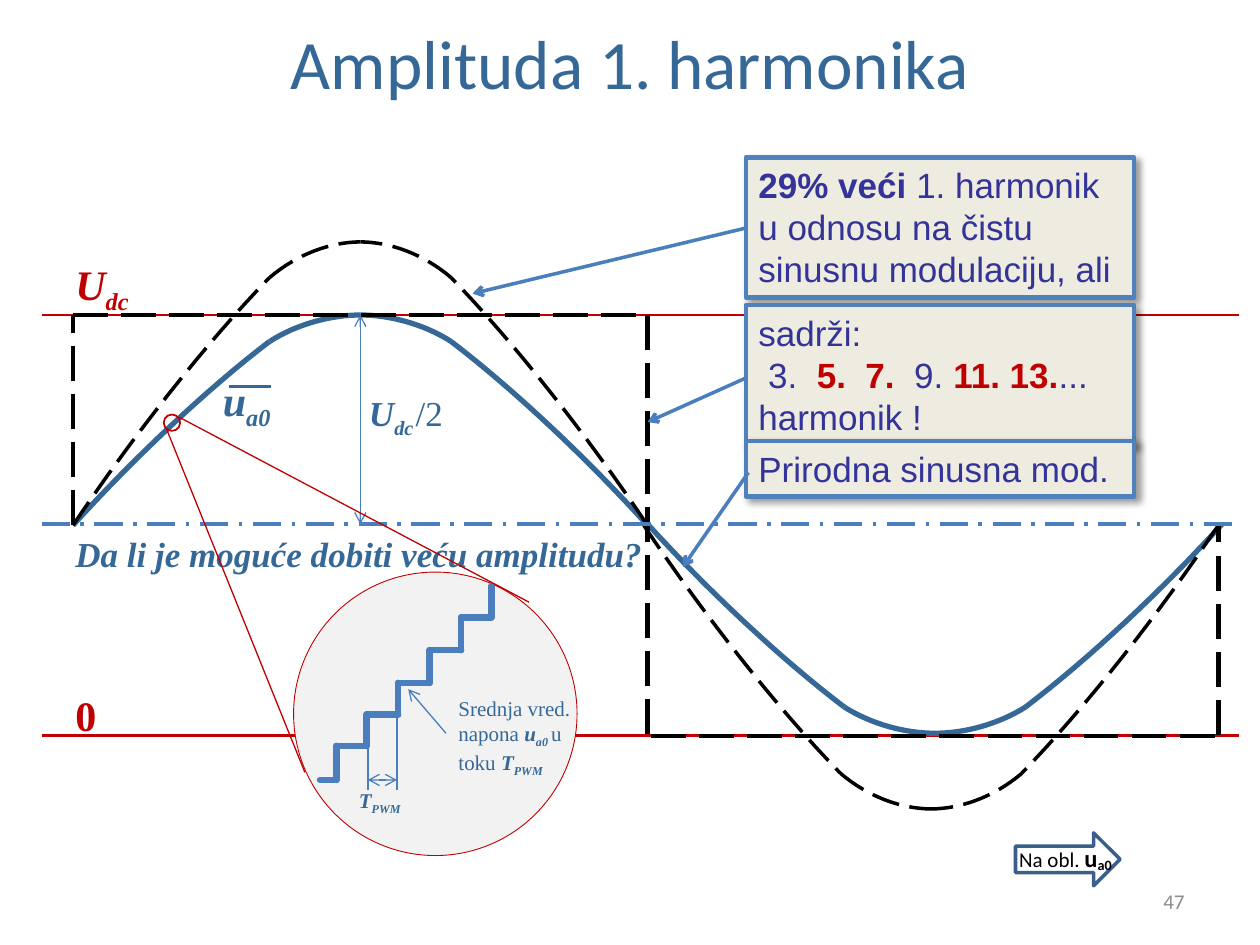
from lxml import etree
from pptx import Presentation
from pptx.dml.color import RGBColor
from pptx.enum.dml import MSO_LINE as Dash
from pptx.enum.shapes import MSO_CONNECTOR as Connector, MSO_SHAPE as Preset
from pptx.enum.text import MSO_ANCHOR as Anchor, MSO_AUTO_SIZE as AutoSize, PP_ALIGN as Align
from pptx.oxml import parse_xml
from pptx.oxml.ns import nsdecls, qn
from pptx.util import Pt

PX = 9144
BLUE = RGBColor(0x35, 0x68, 0x97)
LINE_BLUE = RGBColor(0x4B, 0x7E, 0xBC)
BORDER_BLUE = RGBColor(0x4F, 0x81, 0xBD)
ARROW_BLUE = RGBColor(0x3A, 0x5F, 0x8C)
INDIGO = RGBColor(0x33, 0x33, 0x99)
RED = RGBColor(0xC0, 0x00, 0x00)
BLACK = RGBColor(0, 0, 0)
GREY = RGBColor(0x8C, 0x8C, 0x8C)
LIGHT_GREY = RGBColor(0xF2, 0xF2, 0xF2)
CREAM = RGBColor(0xEE, 0xEC, 0xE1)
SANS, SERIF, NOTE_FONT = "Calibri", "Times New Roman", "Arial"

PLAIN = {"bold": False, "italic": False}
BOLD = {"bold": True}
STRONG = {"bold": True, "italic": True}
SUBSCRIPT = {**STRONG, "baseline": -25}
RED_BOLD = {"bold": True, "color": RED}
RISE = ((0, 0), (47, 52), (105, 107), (156, 146))
CREST = ((156, 146), (178, 160), (205, 167), (228, 167))
QUARTER, PEAK, SAMPLES = 228, 167, 16
SHADOW = (
    f'<a:effectLst {nsdecls("a")}><a:outerShdw blurRad="50800" dist="38100" dir="2700000" '
    'algn="tl" rotWithShape="0"><a:srgbClr val="000000"><a:alpha val="40000"/></a:srgbClr>'
    "</a:outerShdw></a:effectLst>"
)


def bezier(controls, t):
    weights = ((1 - t) ** 3, 3 * t * (1 - t) ** 2, 3 * t * t * (1 - t), t ** 3)
    return tuple(sum(w * point[axis] for w, point in zip(weights, controls)) for axis in (0, 1))


class SlideBuilder:
    def __init__(self, slide):
        self.slide = slide
        self.shapes = slide.shapes

    def stroke(self, line, color, width, dash=None):
        line.color.rgb = color
        line.width = Pt(width)
        if dash:
            line.dash_style = dash

    def line(self, start, end, color, width, dash=None, head=False, tail=False, rounded=False):
        connector = self.shapes.add_connector(
            Connector.STRAIGHT, *(value * PX for value in (*start, *end)))
        self.stroke(connector.line, color, width, dash)
        properties = connector._element.spPr
        outline = properties.find(qn("a:ln"))
        if rounded:
            outline.set("cap", "rnd")
        for wanted, tag in ((head, "a:headEnd"), (tail, "a:tailEnd")):
            if wanted:
                etree.SubElement(outline, qn(tag), type="arrow")
        etree.SubElement(properties, qn("a:effectLst"))

    def half_wave(self, left, baseline, amplitude, color, width, dash=None):
        right = left + 2 * QUARTER
        for origin, direction in ((left, 1), (right, -1)):
            for controls in (RISE, CREST):
                curve = [bezier(controls, step / SAMPLES) for step in range(SAMPLES + 1)]
                points = [((origin + direction * x) * PX, (baseline - y * amplitude / PEAK) * PX)
                          for x, y in curve]
                outline = self.shapes.build_freeform(*points[0], scale=1.0)
                outline.add_line_segments(points[1:], close=False)
                shape = outline.convert_to_shape()
                shape.fill.background()
                shape.shadow.inherit = False
                self.stroke(shape.line, color, width, dash)

    def shape(self, preset, box, color, width, fill=None):
        shape = self.shapes.add_shape(preset, *(value * PX for value in box))
        shape.shadow.inherit = False
        if fill:
            shape.fill.solid()
            shape.fill.fore_color.rgb = fill
        else:
            shape.fill.background()
        self.stroke(shape.line, color, width)
        return shape

    def fill_text(self, frame, paragraphs, align=Align.LEFT, **style):
        for index, runs in enumerate(paragraphs):
            paragraph = frame.add_paragraph() if index else frame.paragraphs[0]
            paragraph.alignment = align
            for text, changes in runs:
                look = {**style, **changes}
                run = paragraph.add_run()
                run.text = text
                run.font.name = look["name"]
                run.font.size = Pt(look["size"])
                run.font.color.rgb = look["color"]
                run.font.bold = look.get("bold", False)
                run.font.italic = look.get("italic", False)
                if "baseline" in look:
                    run._r.get_or_add_rPr().set("baseline", str(look["baseline"] * 1000))

    def text(self, box, runs, wrap=False, grow=True, anchor=Anchor.TOP, **style):
        frame = self.shapes.add_textbox(*(value * PX for value in box)).text_frame
        frame.word_wrap = wrap
        frame.auto_size = AutoSize.SHAPE_TO_FIT_TEXT if grow else AutoSize.NONE
        frame.vertical_anchor = anchor
        self.fill_text(frame, [runs], **style)
        return frame

    def note(self, top, height, paragraphs):
        shape = self.shape(Preset.RECTANGLE, (592, top, 308, height), BORDER_BLUE, 2.75, CREAM)
        properties = shape._element.spPr
        properties.remove(properties.find(qn("a:effectLst")))
        properties.append(parse_xml(SHADOW))
        frame = shape.text_frame
        frame.word_wrap = True
        frame.vertical_anchor = Anchor.TOP
        self.fill_text(frame, paragraphs, name=NOTE_FONT, size=20, color=INDIGO)


def draw_waves(builder):
    for level in (584, 250):
        builder.line((33, level), (983, level), RED, 1.5)
    builder.half_wave(58, 417, 167, BLUE, 3)
    builder.half_wave(514, 416, -166, BLUE, 3)
    square_wave = (((58, 417), (58, 250), (508, 250)), ((514, 250), (514, 583)),
                   ((967, 583), (967, 417)), ((517, 584), (967, 584)))
    for side in square_wave:
        for start, end in zip(side, side[1:]):
            builder.line(start, end, BLACK, 2.5, Dash.LONG_DASH)
    builder.half_wave(58, 417, 225, BLACK, 2, Dash.LONG_DASH)
    builder.half_wave(511, 417, -225, BLACK, 2, Dash.LONG_DASH)


def draw_labels(builder):
    level = {"name": SERIF, "size": 24, "color": RED, "bold": True}
    builder.text((50, 542, 37, 50), [("0", {})], **level)
    builder.text((50, 200, 66, 50), [("U", STRONG), ("dc", SUBSCRIPT)], **level)
    builder.line((33, 416), (983, 416), LINE_BLUE, 0, Dash.LONG_DASH_DOT)
    builder.line((286, 250), (286, 416), LINE_BLUE, 0.75, head=True, tail=True)
    formula = {"name": SERIF, "size": 20, "color": BLUE}
    builder.text((283, 306, 85, 44), [("U", STRONG), ("dc", SUBSCRIPT),
                 (" ", {**SUBSCRIPT, "size": 8}), ("/2", PLAIN)], **formula)
    builder.text((50, 418, 473, 44), [("Da li je moguće dobiti veću amplitudu?", STRONG)], **formula)


def draw_notes(builder):
    builder.note(125, 111, [[("29% veći ", BOLD),
                 ("1. harmonik u odnosu na čistu sinusnu modulaciju, ali", {})]])
    builder.line((592, 181), (375, 233), LINE_BLUE, 2, tail=True)
    builder.note(242, 111, [[("sadrži:", {})],
                 [(" 3.  ", {}), ("5.  7.", RED_BOLD), ("  9. ", {}), ("11. 13.", RED_BOLD), ("...", {})],
                 [("harmonik !", {})]])
    builder.line((592, 300), (514, 335), LINE_BLUE, 2, tail=True)


def draw_magnifier(builder):
    builder.shape(Preset.OVAL, (233, 454, 225, 225), RED, 0.5, LIGHT_GREY)
    builder.shape(Preset.OVAL, (130, 329, 13, 13), RED, 1)
    columns = (254, 267, 291, 316, 341, 366, 390)
    levels = (619, 592, 567, 542, 516, 490, 465)
    for left, right, low, high in zip(columns, columns[1:], levels, levels[1:]):
        builder.line((left, low), (right, low), LINE_BLUE, 3.75, rounded=True)
        builder.line((right, low), (right, high), LINE_BLUE, 3.75, rounded=True)
    for edge in (292, 315):
        builder.line((edge, 567), (edge, 627), LINE_BLUE, 0.75)
    builder.line((292, 619), (315, 619), LINE_BLUE, 0.75, head=True, tail=True)
    period = [("T", STRONG), ("PWM", SUBSCRIPT)]
    caption = {"name": SERIF, "size": 12, "color": BLUE}
    builder.text((275, 620, 57, 30), period, **caption)
    builder.text((354, 547, 121, 71), [("Srednja vred. napona ", {}), ("u", STRONG),
                 ("a0 ", SUBSCRIPT), ("u toku ", {}), *period], wrap=True, **caption)
    builder.line((354, 582), (324, 547), LINE_BLUE, 0.75, tail=True)
    builder.line((142, 331), (420, 478), RED, 0.75)
    builder.line((132, 340), (242, 613), RED, 0.75)


def main():
    presentation = Presentation()
    presentation.slide_width, presentation.slide_height = 1000 * PX, 750 * PX
    builder = SlideBuilder(presentation.slides.add_slide(presentation.slide_layouts[6]))
    draw_waves(builder)
    builder.text((717, 695, 233, 40), [("47", {})], grow=False, anchor=Anchor.MIDDLE,
                 wrap=True, align=Align.RIGHT, name=SANS, size=12, color=GREY)
    title = builder.text((50, 16, 900, 125), [("Amplituda 1. harmonika", {})], grow=False,
                         wrap=True, align=Align.CENTER, name=SANS, size=39.6, color=BLUE)
    title.margin_top = 0
    draw_labels(builder)
    draw_notes(builder)
    draw_magnifier(builder)
    builder.shape(Preset.RIGHT_ARROW, (806, 661, 83, 42), ARROW_BLUE, 2)
    builder.text((799, 664, 108, 34), [("Na obl. ", {}), ("u", {**BOLD, "size": 14}),
                 ("a0", {**BOLD, "size": 14, "baseline": -15})],
                 wrap=True, name=SANS, size=12, color=BLACK)
    builder.text((167, 292, 64, 50), [("u", STRONG), ("a0", SUBSCRIPT)],
                 wrap=True, name=SERIF, size=24, color=BLUE)
    builder.line((182, 307), (215, 307), BLUE, 1.75)
    builder.note(350, 44, [[("Prirodna sinusna mod.", {})]])
    builder.line((594, 375), (542, 450), LINE_BLUE, 2, tail=True)
    presentation.save("out.pptx")


if __name__ == "__main__":
    main()
